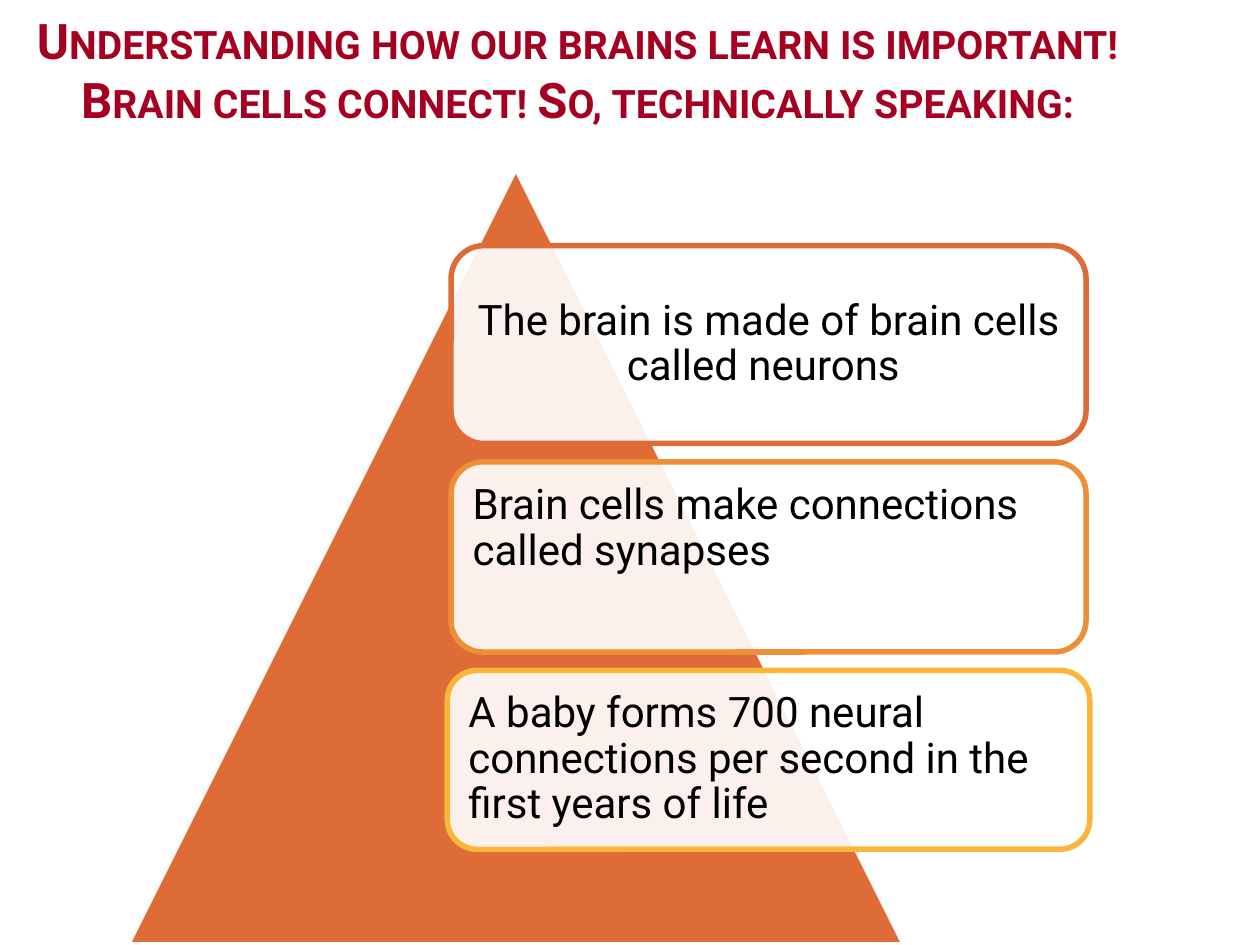
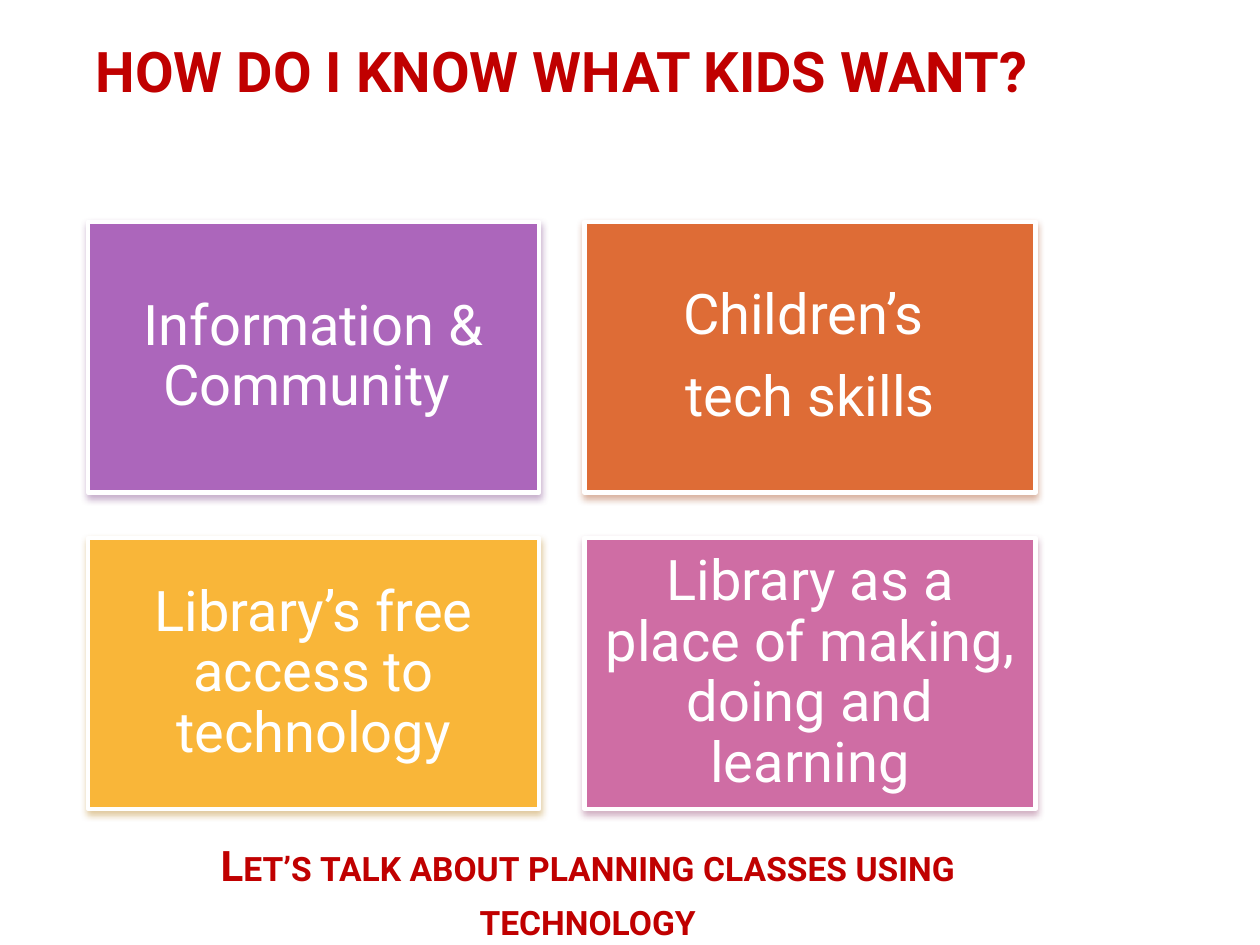
from lxml import etree
from pptx import Presentation
from pptx import util as u
from pptx.dml.color import RGBColor
from pptx.enum import shapes, text
from pptx.oxml import ns

# Palette
WHITE = RGBColor(0xFF, 0xFF, 0xFF)
BLACK = RGBColor(0x00, 0x00, 0x00)
CRIMSON = RGBColor(0xA5, 0x00, 0x21)
RED = RGBColor(0xC0, 0x00, 0x00)
ORANGE = RGBColor(0xDE, 0x6C, 0x36)
AMBER = RGBColor(0xEC, 0x8F, 0x37)
YELLOW = RGBColor(0xF9, 0xB6, 0x39)
PURPLE = RGBColor(0xAC, 0x66, 0xBB)
PINK = RGBColor(0xCF, 0x6D, 0xA4)
PURPLE_SHADE = RGBColor(0x6E, 0x30, 0x7B)
ORANGE_SHADE = RGBColor(0x9C, 0x37, 0x07)
YELLOW_SHADE = RGBColor(0xB0, 0x74, 0x05)
PINK_SHADE = RGBColor(0x89, 0x32, 0x63)

# Slide grid: 100 columns by 75 rows of square cells
CELL = u.Inches(0.1)
COLS, ROWS = 100, 75


def cells(n):
    return round(n * CELL)


class Deck:
    """Shared style plus the slide being built."""

    font = "Roboto"

    def __init__(self):
        self.prs = Presentation()
        self.prs.slide_width = cells(COLS)
        self.prs.slide_height = cells(ROWS)
        self.s = None

    def slide(self):
        self.s = self.prs.slides.add_slide(self.prs.slide_layouts[5])

    def set_text(self, tf, content, size, color, align=text.PP_ALIGN.CENTER,
                 bold=False, small_caps=False, spacing=1.0, after=0):
        tf.word_wrap = True
        tf.auto_size = text.MSO_AUTO_SIZE.NONE
        tf.text = content
        for p in tf.paragraphs:
            p.alignment = align
            p.line_spacing = spacing
            p.space_after = u.Pt(after)
            for r in p.runs:
                r.font.name = self.font
                r.font.size = u.Pt(size)
                r.font.bold = bold
                r.font.color.rgb = color
                if small_caps:
                    r._r.get_or_add_rPr().set("cap", "small")

    def inset(self, tf, x, top, bottom):
        tf.margin_left = tf.margin_right = cells(x)
        tf.margin_top, tf.margin_bottom = cells(top), cells(bottom)

    def title(self, box, content, size, color, small_caps=False, bottom=0):
        sp = self.s.shapes.title
        sp.left, sp.top, sp.width, sp.height = map(cells, box)
        tf = sp.text_frame
        self.set_text(tf, content, size, color, bold=True, small_caps=small_caps)
        self.inset(tf, 0.5, 0, bottom)
        tf.vertical_anchor = text.MSO_ANCHOR.BOTTOM

    def shape(self, kind, box, fill, line, weight, opacity=100):
        sp = self.s.shapes.add_shape(kind, *map(cells, box))
        sp.shadow.inherit = False
        sp.fill.solid()
        sp.fill.fore_color.rgb = fill
        if opacity < 100:
            clr = sp._element.spPr.find(".//" + ns.qn("a:srgbClr"))
            etree.SubElement(clr, ns.qn("a:alpha"), val=str(opacity * 1000))
        sp.line.color.rgb = line
        sp.line.width = u.Pt(weight)
        return sp

    def card(self, box, content, line, align, anchor):
        sp = self.shape(shapes.MSO_SHAPE.ROUNDED_RECTANGLE, box, WHITE, line, 3.15, 90)
        tf = sp.text_frame
        self.set_text(tf, content, 24, BLACK, align, spacing=0.9, after=9)
        self.inset(tf, 1, 1, 1)
        tf.vertical_anchor = anchor

    def tile(self, box, content, fill, shade):
        sp = self.shape(shapes.MSO_SHAPE.RECTANGLE, box, fill, WHITE, 2.5)
        effects = sp._element.spPr.find(ns.qn("a:effectLst"))
        shadow = etree.SubElement(
            effects, ns.qn("a:outerShdw"), blurRad=str(u.Pt(4)),
            dist=str(u.Pt(2)), dir="5400000", rotWithShape="0")
        clr = etree.SubElement(shadow, ns.qn("a:srgbClr"), val=str(shade))
        etree.SubElement(clr, ns.qn("a:alpha"), val="38000")
        tf = sp.text_frame
        self.set_text(tf, content, 32, WHITE, spacing=0.9, after=12)
        self.inset(tf, 1.3, 1.3, 1.3)
        tf.vertical_anchor = text.MSO_ANCHOR.MIDDLE

    def caption(self, box, content, size, color):
        tf = self.s.shapes.add_textbox(*map(cells, box)).text_frame
        self.set_text(tf, content, size, color, bold=True, small_caps=True, spacing=1.08)


def brain_slide(deck):
    deck.slide()
    deck.title((0, 0, 91.7, 14.2),
               "Understanding how our brains learn is important! "
               "Brain cells connect! So, technically speaking:",
               28, CRIMSON, small_caps=True, bottom=4)
    deck.shape(shapes.MSO_SHAPE.ISOSCELES_TRIANGLE, (10.1, 13.3, 61.7, 61.7),
               ORANGE, WHITE, 3.15)

    # Cards share a centre line and are stacked with equal gaps
    center, top, gap = 61, 19.5, 1.45
    left, centered = text.PP_ALIGN.LEFT, text.PP_ALIGN.CENTER
    at_top, middle = text.MSO_ANCHOR.TOP, text.MSO_ANCHOR.MIDDLE
    cards = [
        ("The brain is made of brain cells called neurons ",
         50.4, 15.7, ORANGE, centered, middle),
        ("Brain cells make connections called synapses",
         50.4, 15.1, AMBER, left, at_top),
        ("A baby forms 700 neural connections per second in the first years of life",
         51, 14.2, YELLOW, left, at_top),
    ]
    for content, width, height, line, align, anchor in cards:
        deck.card((center - width / 2, top, width, height), content, line, align, anchor)
        top += height + gap


def kids_slide(deck):
    deck.slide()
    deck.title((5, 1.7, 79.2, 6.5), "HOW DO I KNOW WHAT KIDS WANT?", 32, RED)

    # Two by two tiles
    left, top, width, height, gap = 7, 17.6, 35.8, 21.5, 3.6
    tiles = [
        ("Information & Community ", PURPLE, PURPLE_SHADE),
        ("Children’s \ntech skills", ORANGE, ORANGE_SHADE),
        ("Library’s free access to technology", YELLOW, YELLOW_SHADE),
        ("Library as a place of making, doing and learning", PINK, PINK_SHADE),
    ]
    for i, (content, fill, shade) in enumerate(tiles):
        row, col = divmod(i, 2)
        box = (left + col * (width + gap), top + row * (height + gap), width, height)
        deck.tile(box, content, fill, shade)

    deck.caption((8.3, 65.8, 76.7, 9),
                 "Let’s talk about planning classes using technology", 24, RED)


def main():
    deck = Deck()
    brain_slide(deck)
    kids_slide(deck)
    deck.prs.save("out.pptx")


if __name__ == "__main__":
    main()
